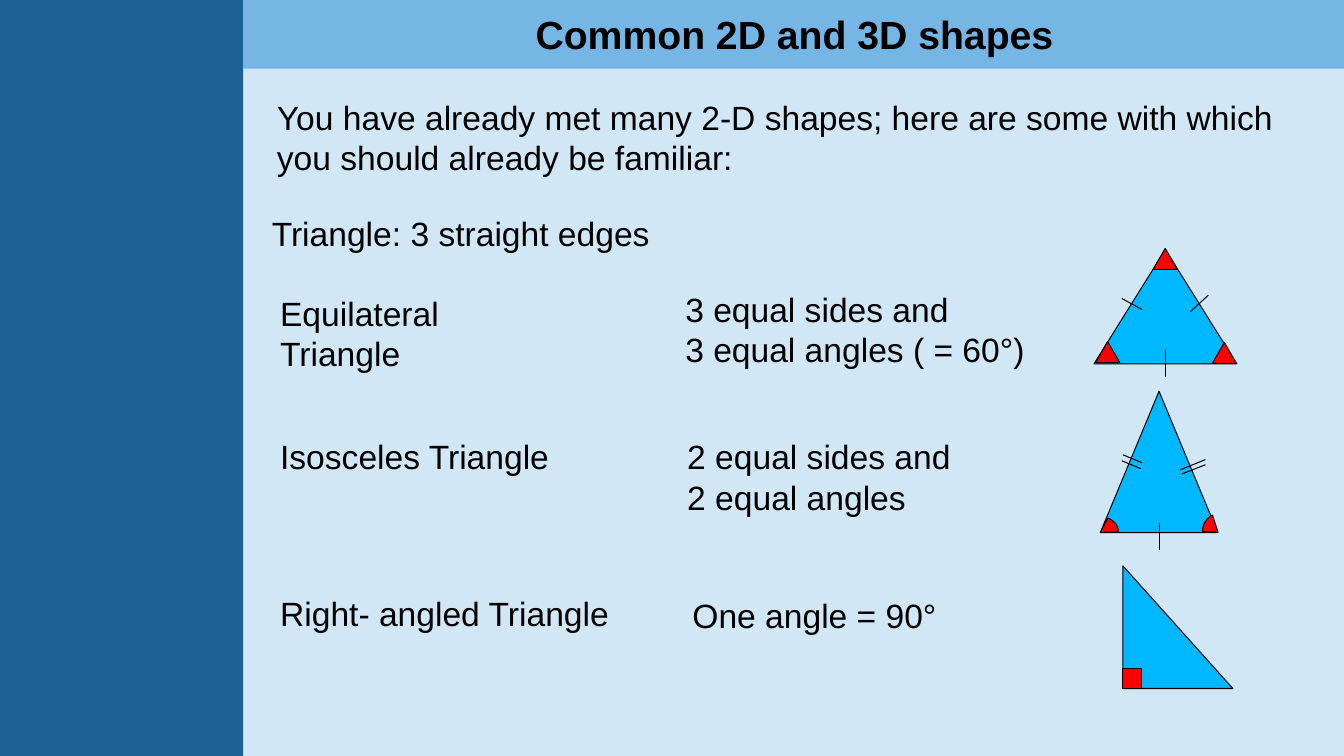
from lxml.etree import SubElement
from pptx import Presentation
from pptx.dml.color import RGBColor
from pptx.enum.shapes import MSO_CONNECTOR, MSO_SHAPE
from pptx.enum.text import MSO_ANCHOR, MSO_AUTO_SIZE, PP_ALIGN
from pptx.oxml.ns import qn
from pptx.util import Cm, Pt

BLACK, BLUE, RED = "000000", "00B8FF", "FF0000"

TEXTS = [
    (6.73, 2.31, 27, 2.31, ["You have already met many 2-D shapes; here are some with which "
                            "you should already be familiar:"]),
    (6.6, 5.25, 11.56, 1.27, ["Triangle: 3 straight edges"]),
    (6.81, 7.26, 6.81, 2.31, ["Equilateral Triangle"]),
    (6.81, 10.87, 7.6, 1.27, ["Isosceles Triangle"]),
    (6.81, 14.81, 9.1, 1.27, ["Right- angled Triangle"]),
    (17.2, 14.87, 7.42, 1.27, ["One angle = 90°"]),
    (17.02, 7.16, 9.68, 2.31, ["3 equal sides and", "3 equal angles ( = 60°)"]),
    (17.07, 10.87, 7.21, 2.31, ["2 equal sides and", "2 equal angles"]),
]

TICKS = [
    (29.36, 8.79, 29.36, 9.5),
    (28.27, 7.52, 28.78, 7.8),
    (30, 7.85, 30.45, 7.44),
    (29.21, 13.18, 29.21, 13.87),
    (28.3, 11.46, 28.78, 11.66),
    (28.27, 11.61, 28.75, 11.81),
    (30.38, 11.58, 29.74, 11.84),
    (30.38, 11.71, 29.79, 11.94),
]


def colour(value):
    """Turn a hex string into a colour."""
    return RGBColor.from_string(value)


def format_font(paragraph, size, bold=False):
    """Apply the slide's black Arial to a paragraph."""
    formats = {"name": "Arial", "size": Pt(size), "bold": bold}
    for name, value in formats.items():
        setattr(paragraph.font, name, value)
    paragraph.font.color.rgb = colour(BLACK)


def place_title(slide, text):
    """Move the title placeholder onto the header band and format it."""
    title = slide.shapes.title
    position = {"left": Cm(6.15), "top": Cm(0.13), "width": Cm(27.74), "height": Cm(1.45)}
    for name, value in position.items():
        setattr(title, name, value)
    title.text_frame.text = text
    title.text_frame.vertical_anchor = MSO_ANCHOR.MIDDLE
    paragraph = title.text_frame.paragraphs[0]
    paragraph.alignment = PP_ALIGN.CENTER
    format_font(paragraph, 28, bold=True)
    title.element.getparent().append(title.element)


def add_text(slide, left, top, width, height, lines):
    """Add a text box with one paragraph per line."""
    frame = slide.shapes.add_textbox(Cm(left), Cm(top), Cm(width), Cm(height)).text_frame
    frame.word_wrap = True
    frame.auto_size = MSO_AUTO_SIZE.SHAPE_TO_FIT_TEXT
    frame.text = "\n".join(lines)
    for paragraph in frame.paragraphs:
        format_font(paragraph, 24)


def add_figure(slide, kind, left, top, width, height, fill, outlined=True):
    """Add a filled preset shape, with a thin black outline if wanted."""
    shape = slide.shapes.add_shape(kind, Cm(left), Cm(top), Cm(width), Cm(height))
    shape.shadow.inherit = False
    shape.fill.solid()
    shape.fill.fore_color.rgb = colour(fill)
    if outlined:
        shape.line.color.rgb = colour(BLACK)
        shape.line.width = Pt(0.75)
    else:
        shape.line.fill.background()
    return shape


def add_angle(slide, left, top, width, height, start, end):
    """Add a red pie wedge between two angles in degrees."""
    wedge = add_figure(slide, MSO_SHAPE.PIE, left, top, width, height, RED)
    for index, degrees in enumerate((start, end)):
        wedge.adjustments[index] = degrees * 0.6


def add_tick(slide, *ends):
    """Add a thin black mark across an edge."""
    tick = slide.shapes.add_connector(MSO_CONNECTOR.STRAIGHT, *map(Cm, ends))
    tick.line.color.rgb = colour(BLACK)
    tick.line.width = Pt(0.75)
    SubElement(tick.element.spPr, qn("a:effectLst"))


def main():
    """Build and save the slide."""
    presentation = Presentation()
    presentation.slide_width, presentation.slide_height = Cm(33.87), Cm(19.05)
    slide = presentation.slides.add_slide(presentation.slide_layouts[5])
    slide.background.fill.solid()
    slide.background.fill.fore_color.rgb = colour("D1E7F6")

    add_figure(slide, MSO_SHAPE.RECTANGLE, 0, 0, 6.13, 19.05, "1D6294", outlined=False)
    add_figure(slide, MSO_SHAPE.RECTANGLE, 6.13, 0, 27.74, 1.73, "75B6E5", outlined=False)
    place_title(slide, "Common 2D and 3D shapes")
    for text in TEXTS:
        add_text(slide, *text)

    add_figure(slide, MSO_SHAPE.ISOSCELES_TRIANGLE, 27.57, 6.29, 3.6, 2.88, BLUE)
    add_figure(slide, MSO_SHAPE.ISOSCELES_TRIANGLE, 27.73, 9.86, 2.96, 3.56, BLUE)
    add_figure(slide, MSO_SHAPE.RIGHT_TRIANGLE, 28.3, 14.26, 2.77, 3.09, BLUE)
    for tick in TICKS:
        add_tick(slide, *tick)

    for left, top in ((29.06, 6.26), (27.61, 8.61), (30.55, 8.63)):
        add_figure(slide, MSO_SHAPE.ISOSCELES_TRIANGLE, left, top, 0.61, 0.53, RED)
    add_figure(slide, MSO_SHAPE.RECTANGLE, 28.29, 16.85, 0.47, 0.49, RED)
    add_angle(slide, 30.3, 12.95, 0.79, 0.92, 182, 252)
    add_angle(slide, 27.27, 13.02, 0.92, 0.79, 298, 359)
    presentation.save("out.pptx")


if __name__ == "__main__":
    main()
